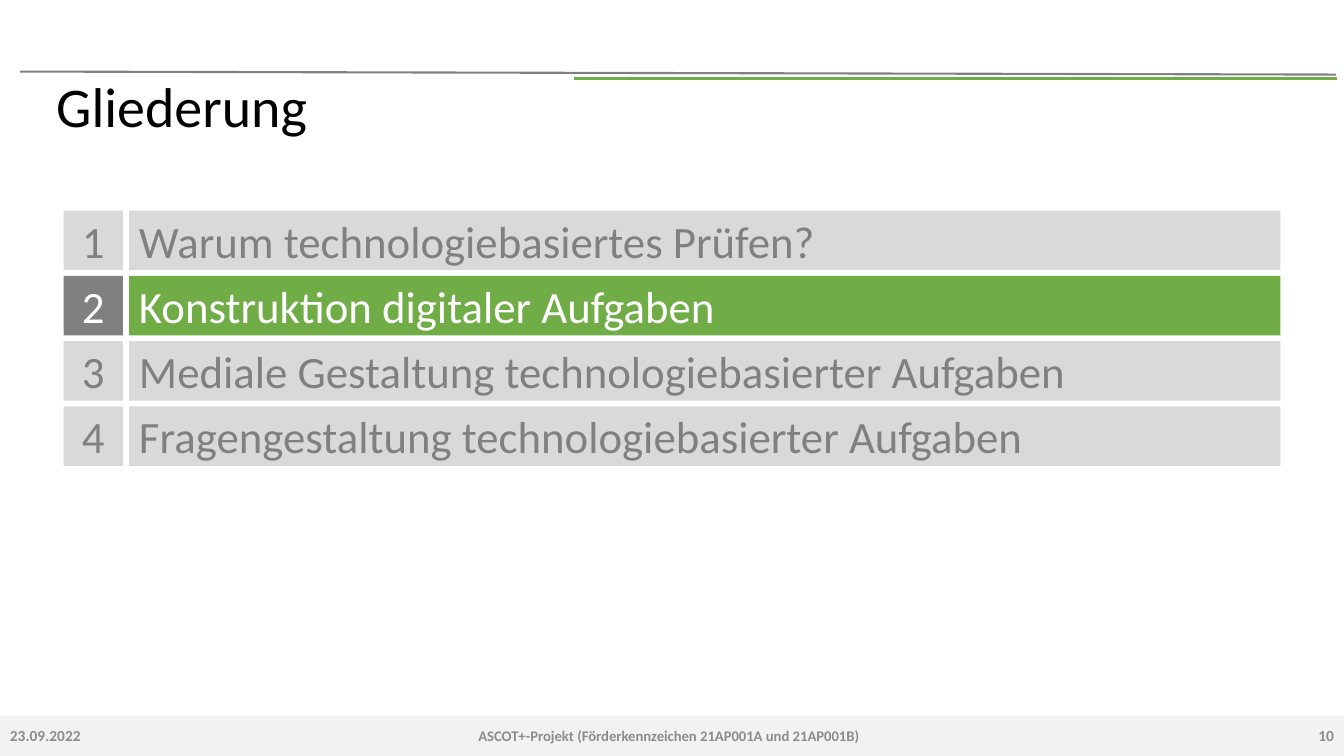
from lxml import etree
from pptx import Presentation
from pptx.dml.color import RGBColor
from pptx.enum.shapes import MSO_CONNECTOR as CONN, MSO_SHAPE as SHAPE
from pptx.enum.text import MSO_ANCHOR as ANCHOR, PP_ALIGN as ALIGN
from pptx.oxml.ns import qn
from pptx.util import Inches, Pt

FONT = "Calibri"
GREEN, GREY, PALE, BAND = "70AD47", "808080", "D9D9D9", "F2F2F2"
WHITE, BLACK, FOOTER_TEXT = "FFFFFF", "000000", "8C8C8C"

TOPICS = [
    "Warum technologiebasiertes Prüfen?",
    "Konstruktion digitaler Aufgaben",
    "Mediale Gestaltung technologiebasierter Aufgaben",
    "Fragengestaltung technologiebasierter Aufgaben",
]
CURRENT = 2
AGENDA_TOP, ROW_HEIGHT, ROW_STEP = 2.09, 0.59, 0.647
FOOTER_TOP, FOOTER_HEIGHT = 7.1, 0.4


def rgb(color):
    return RGBColor.from_string(color)


def write(sp, text, size, color, align=ALIGN.LEFT, bold=False):
    """Put one vertically centred paragraph into a shape and return it."""
    tf = sp.text_frame
    tf.word_wrap = True
    tf.vertical_anchor = ANCHOR.MIDDLE
    tf.text = text
    p = tf.paragraphs[0]
    p.alignment = align
    font = p.runs[0].font
    font.name, font.size, font.bold = FONT, Pt(size), bold
    font.color.rgb = rgb(color)
    return p


def add_bar(s, x, y, w, h, fill):
    sp = s.shapes.add_shape(SHAPE.RECTANGLE, Inches(x), Inches(y), Inches(w), Inches(h))
    sp.shadow.inherit = False
    sp.fill.solid()
    sp.fill.fore_color.rgb = rgb(fill)
    sp.line.fill.background()
    return sp


def add_text(s, x, y, w, h, *args, **kwargs):
    sp = s.shapes.add_textbox(Inches(x), Inches(y), Inches(w), Inches(h))
    return write(sp, *args, **kwargs)


def add_line(s, x1, y1, x2, y2, color, width):
    line = s.shapes.add_connector(CONN.STRAIGHT, Inches(x1), Inches(y1), Inches(x2), Inches(y2))
    line.line.color.rgb = rgb(color)
    line.line.width = Pt(width)
    etree.SubElement(line._element.spPr, qn("a:effectLst"))


def add_agenda_row(s, number, topic):
    y = AGENDA_TOP + (number - 1) * ROW_STEP
    if number == CURRENT:
        number_fill, topic_fill, color = GREY, GREEN, WHITE
    else:
        number_fill, topic_fill, color = PALE, PALE, GREY
    write(add_bar(s, 0.63, y, 0.59, ROW_HEIGHT, number_fill), str(number), 32, color, ALIGN.CENTER)
    write(add_bar(s, 1.28, y, 11.42, ROW_HEIGHT, topic_fill), topic, 32, color)


def add_footer(s):
    add_bar(s, 0, FOOTER_TOP, 13.33, FOOTER_HEIGHT, BAND)
    for x, w, text, size, align in [
        (0, 1.7, "23.09.2022", 11, ALIGN.LEFT),
        (1.7, 9.87, "ASCOT+-Projekt (Förderkennzeichen 21AP001A und 21AP001B)", 10.5, ALIGN.CENTER),
        (11.69, 1.64, "10", 11, ALIGN.RIGHT),
    ]:
        add_text(s, x, FOOTER_TOP, w, FOOTER_HEIGHT, text, size, FOOTER_TEXT, align, bold=True)


def main():
    prs = Presentation()
    prs.slide_width, prs.slide_height = Inches(13.33), Inches(7.5)
    s = prs.slides.add_slide(prs.slide_layouts[6])
    add_footer(s)
    add_line(s, 0.2, 0.71, 13.25, 0.74, GREY, 1.5)
    add_line(s, 5.69, 0.78, 13.26, 0.78, GREEN, 2.25)
    for number, topic in enumerate(TOPICS, 1):
        add_agenda_row(s, number, topic)
    title = add_text(s, 0.46, 0.79, 12.2, 0.59, "Gliederung", 40, BLACK)
    title.line_spacing = 0.9
    prs.save("out.pptx")


if __name__ == "__main__":
    main()
